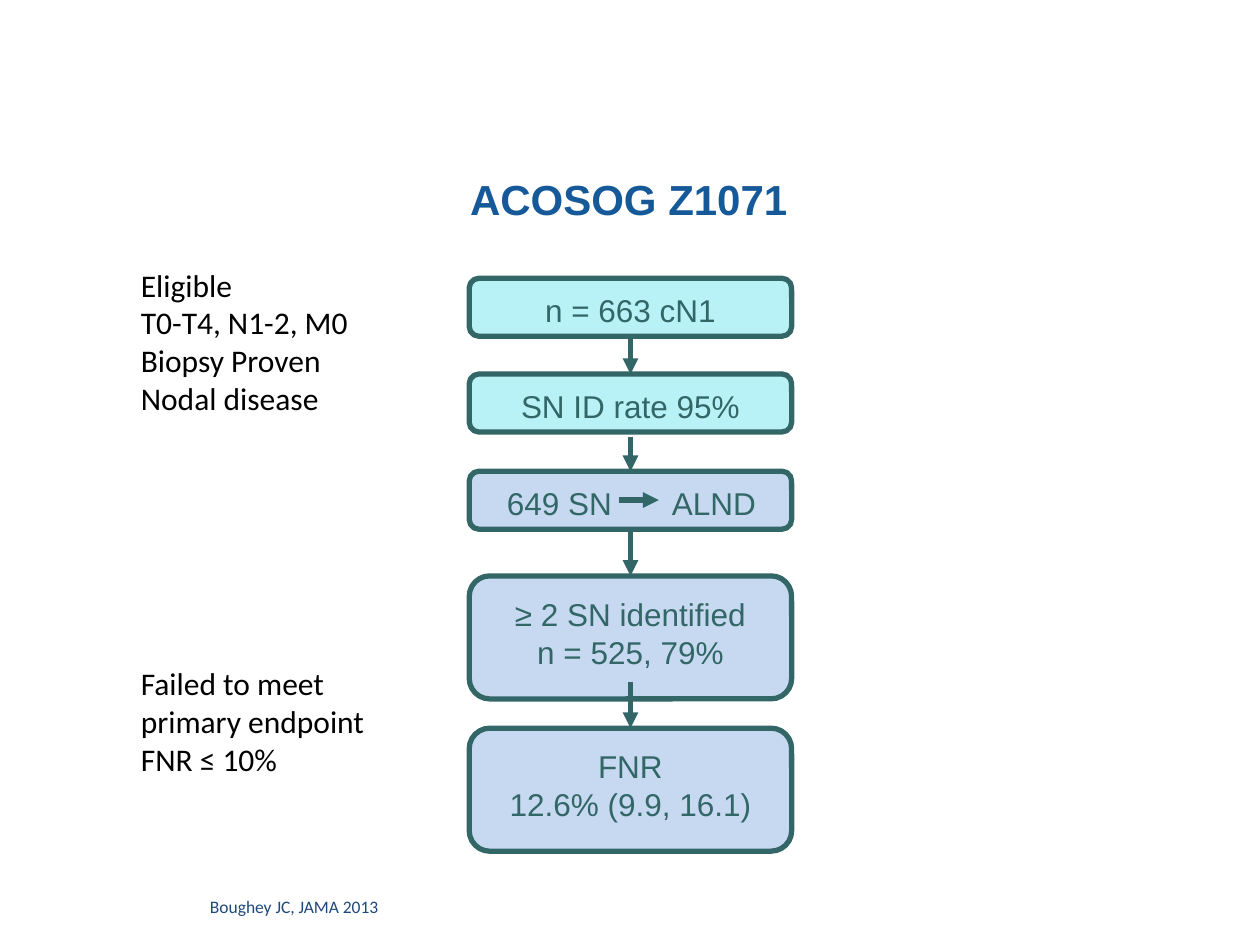
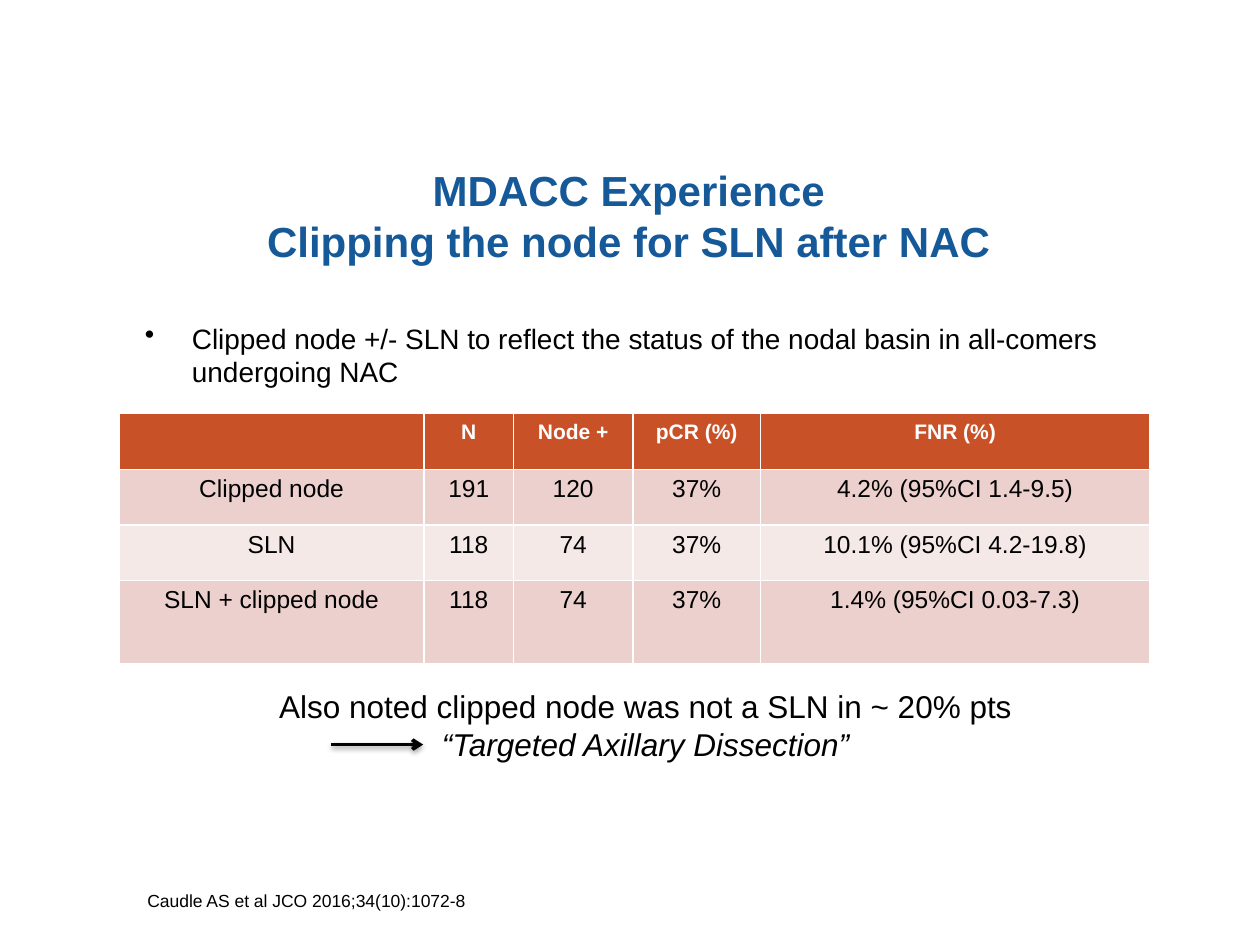
from dataclasses import dataclass

from lxml.etree import SubElement
from pptx import Presentation
from pptx.dml.color import RGBColor
from pptx.enum.shapes import MSO_CONNECTOR, MSO_SHAPE
from pptx.enum.text import MSO_ANCHOR, MSO_AUTO_SIZE, PP_ALIGN
from pptx.oxml.ns import qn
from pptx.util import Cm, Pt


@dataclass(frozen=True)
class Theme:
    title: str = "165999"
    teal: str = "336666"
    aqua: str = "B8F2F7"
    pale_blue: str = "C6D9F1"
    navy: str = "1F497D"
    black: str = "000000"
    white: str = "FFFFFF"
    header: str = "C95127"
    bands: tuple = ("EBD0CD", "F5E9E8")
    font: str = "Arial"
    note_font: str = "Calibri"
    title_size: int = 24
    text_size: int = 18
    bullet_size: int = 16
    cell_size: int = 14
    header_size: int = 12
    source_size: int = 10


T = Theme()
LEFT, CENTER = PP_ALIGN.LEFT, PP_ALIGN.CENTER


def rgb(value):
    return RGBColor.from_string(value)


def write(tf, *lines, size=T.text_size, color=T.black, font=T.font,
          bold=False, italic=False, align=CENTER):
    """Add one paragraph per line; a newline inside a line is a soft break."""
    for line in lines:
        p = tf.add_paragraph() if tf.text else tf.paragraphs[0]
        p.alignment = align
        for i, part in enumerate(line.split("\n")):
            if i:
                p.add_line_break()
            r = p.add_run()
            r.text = part
            f = r.font
            f.name, f.size, f.bold, f.italic = font, Pt(size), bold, italic
            f.color.rgb = rgb(color)
    return p


def add_title(s, text, top, height):
    sp = s.shapes.title
    sp.left, sp.top, sp.width, sp.height = Cm(0.56), Cm(top), Cm(24.23), Cm(height)
    tf = sp.text_frame
    tf.auto_size = MSO_AUTO_SIZE.NONE
    tf.vertical_anchor = MSO_ANCHOR.MIDDLE
    write(tf, text, size=T.title_size, color=T.title, bold=True)


def add_text(s, box, *lines, wrap=True, **fmt):
    tf = s.shapes.add_textbox(*map(Cm, box)).text_frame
    tf.word_wrap = wrap
    write(tf, *lines, **fmt)
    return tf


def add_arrow(s, start, end, color=T.teal, width=3, head="triangle", shadow=False):
    line = s.shapes.add_connector(MSO_CONNECTOR.STRAIGHT, *map(Cm, start + end))
    line.line.color.rgb = rgb(color)
    line.line.width = Pt(width)
    SubElement(line.line._get_or_add_ln(), qn("a:tailEnd"), type=head)
    effects = SubElement(line._element.spPr, qn("a:effectLst"))
    if shadow:
        shade = SubElement(effects, qn("a:outerShdw"), blurRad="40000",
                           dist="20000", dir="5400000", rotWithShape="0")
        tone = SubElement(shade, qn("a:srgbClr"), val=T.black)
        SubElement(tone, qn("a:alpha"), val="38000")


def add_step(s, box, fill, *lines, inset=0.2, align=CENTER):
    sp = s.shapes.add_shape(MSO_SHAPE.ROUNDED_RECTANGLE, *map(Cm, box))
    sp.shadow.inherit = False
    sp.fill.solid()
    sp.fill.fore_color.rgb = rgb(fill)
    sp.line.color.rgb = rgb(T.teal)
    sp.line.width = Pt(3)
    tf = sp.text_frame
    tf.vertical_anchor = MSO_ANCHOR.TOP
    tf.margin_top = Cm(inset)
    return tf, write(tf, *lines, color=T.teal, align=align)


def add_tab(p, position):
    tabs = SubElement(p._p.get_or_add_pPr(), qn("a:tabLst"))
    SubElement(tabs, qn("a:tab"), pos=str(Cm(position)), algn="l")


def add_bullet(p, indent):
    pPr = p._p.get_or_add_pPr()
    pPr.set("marL", str(Cm(indent)))
    pPr.set("indent", str(-Cm(indent)))
    SubElement(pPr, qn("a:buChar"), char="•")


def add_data_table(s, left, top, widths, heights, rows):
    table = s.shapes.add_table(len(rows), len(widths), Cm(left), Cm(top),
                               Cm(sum(widths)), Cm(sum(heights))).table
    for col, width in zip(table.columns, widths):
        col.width = Cm(width)
    for i, (row, height, values) in enumerate(zip(table.rows, heights, rows)):
        row.height = Cm(height)
        if i:
            fill, fmt = T.bands[(i - 1) % 2], dict(size=T.cell_size)
        else:
            fill, fmt = T.header, dict(size=T.header_size, color=T.white, bold=True)
        for cell, value in zip(row.cells, values):
            cell.fill.solid()
            cell.fill.fore_color.rgb = rgb(fill)
            write(cell.text_frame, value, **fmt)


def build_trial(s):
    add_title(s, "ACOSOG Z1071", 3.33, 1.35)
    note = dict(font=T.note_font, align=LEFT, wrap=False)
    add_text(s, (2.59, 5.23, 4.72, 3.33), "Eligible", "T0-T4, N1-2, M0",
             "Biopsy Proven", "Nodal disease", **note)
    add_text(s, (2.59, 13.26, 5.08, 2.57), "Failed to meet", "primary endpoint",
             "FNR ≤ 10%", **note)

    left, width, low, tall = 9.46, 6.5, 1.17, 2.48
    add_step(s, (left, 5.61, width, low), T.aqua, "n = 663 cN1")
    add_step(s, (left, 7.54, width, low), T.aqua, "SN ID rate 95%")
    tf, p = add_step(s, (left, 9.5, width, low), T.pale_blue, "649 SN\tALND", align=LEFT)
    tf.margin_left = Cm(0.7)
    add_tab(p, 3.33)
    add_step(s, (left, 11.61, width, tall), T.pale_blue,
             "≥ 2 SN identified", "n = 525, 79%", inset=0.26)
    add_step(s, (left, 14.68, width, tall), T.pale_blue,
             "FNR", "12.6% (9.9, 16.1)", inset=0.26)

    middle = left + width / 2
    for end, length in ((7.54, 0.7), (9.5, 0.7), (11.61, 0.94), (14.68, 0.94)):
        add_arrow(s, (middle, end - length), (middle, end))
    add_arrow(s, (12.47, 10.08), (13.28, 10.08))

    add_text(s, (2.97, 17.93, 5.92, 0.69), "Boughey JC, JAMA 2013",
             size=T.source_size, color=T.navy, font=T.note_font)


def build_clipping(s):
    add_title(s, "MDACC Experience\nClipping the node for SLN after NAC", 3.28, 2.11)
    tf = add_text(s, (2.67, 6.35, 20.02, 1.65),
                  "Clipped node +/- SLN to reflect the status of the nodal basin "
                  "in all-comers undergoing NAC", size=T.bullet_size, align=LEFT)
    add_bullet(tf.paragraphs[0], 0.95)
    add_data_table(
        s, 2.4, 8.34, (6.15, 1.8, 2.41, 2.57, 7.85), (1.12, 1.12, 1.12, 1.68),
        (("", "N", "Node +", "pCR (%)", "FNR (%)"),
         ("Clipped node", "191", "120", "37%", "4.2% (95%CI 1.4-9.5)"),
         ("SLN", "118", "74", "37%", "10.1% (95%CI 4.2-19.8)"),
         ("SLN + clipped node", "118", "74", "37%", "1.4% (95%CI 0.03-7.3)")))
    tf = add_text(s, (2.08, 13.72, 21.87, 1.8),
                  "Also noted clipped node was not a SLN in ~ 20% pts")
    write(tf, "“Targeted Axillary Dissection”", italic=True)
    add_arrow(s, (6.68, 15.01), (8.53, 15.01), color=T.black, width=2,
              head="arrow", shadow=True)
    add_text(s, (2.67, 17.81, 7.01, 1.12), "Caudle AS et al JCO 2016;34(10):1072-8",
             size=T.source_size, wrap=False)


def main():
    prs = Presentation()
    prs.slide_width, prs.slide_height = Cm(25.4), Cm(19.05)
    title_only = prs.slide_layouts.get_by_name("Title Only")
    for build in (build_trial, build_clipping):
        build(prs.slides.add_slide(title_only))
    prs.save("out.pptx")


if __name__ == "__main__":
    main()
